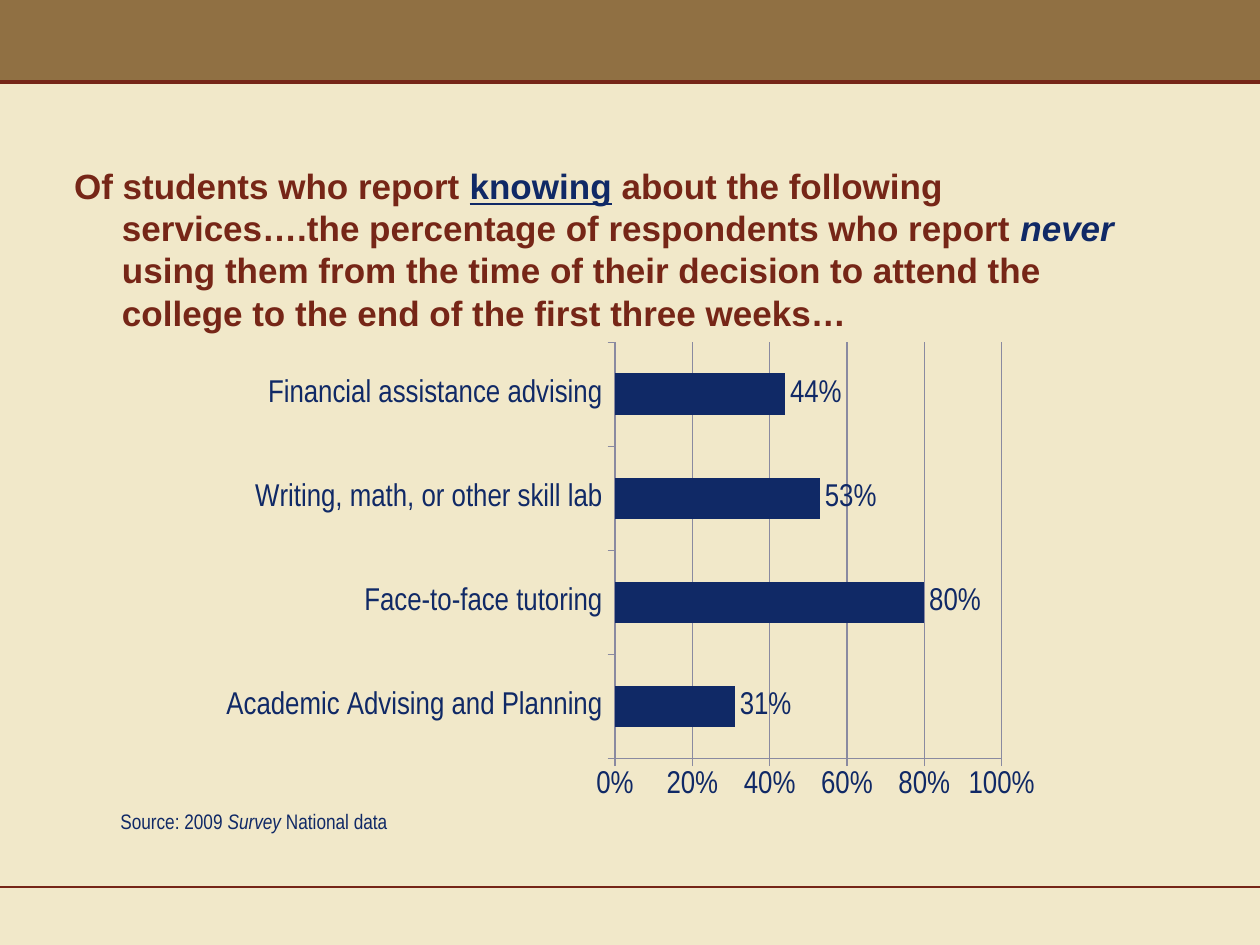
"""Build a slide with a bar chart of services that students know but never use."""
from lxml import etree
from pptx import Presentation
from pptx.chart.data import CategoryChartData as ChartData
from pptx.dml.color import RGBColor
from pptx.enum.chart import XL_CHART_TYPE as ChartType, XL_LABEL_POSITION as LabelPosition
from pptx.enum.chart import XL_TICK_MARK as TickMark
from pptx.enum.shapes import MSO_CONNECTOR as Connector, MSO_SHAPE as Shape
from pptx.enum.text import PP_ALIGN as Align
from pptx.oxml.ns import qn
from pptx.util import Inches, Pt

COLORS = {name: RGBColor.from_string(value) for name, value in {
    "cream": "F1E8C9", "brown": "866435", "maroon": "762617",
    "navy": "102966", "grid": "8A8AA0"}.items()}


def add_span(para, text, font, size, color, bold=False, italic=False, underline=False):
    """Append one formatted run to a paragraph."""
    span = para.add_run()
    span.text = text
    span.font.name = font
    span.font.size = Pt(size)
    span.font.color.rgb = COLORS[color]
    span.font.bold, span.font.italic, span.font.underline = bold, italic, underline


def add_text(left, top, width, height):
    """Add a wrapping text box and return its first paragraph."""
    box = page.shapes.add_textbox(Inches(left), Inches(top), Inches(width), Inches(height))
    box.text_frame.word_wrap = True
    return box.text_frame.paragraphs[0]


deck = Presentation()
deck.slide_width, deck.slide_height = Inches(10), Inches(7.5)
page = deck.slides.add_slide(deck.slide_layouts[6])

for height, color, opacity in [(7.5, "cream", 100), (0.64, "brown", 90)]:
    panel = page.shapes.add_shape(Shape.RECTANGLE, 0, 0, Inches(10), Inches(height))
    panel.shadow.inherit = False
    panel.fill.solid()
    panel.fill.fore_color.rgb = COLORS[color]
    panel.line.fill.background()
    if opacity < 100:
        tint = panel.fill._xPr.find(".//" + qn("a:srgbClr"))
        etree.SubElement(tint, qn("a:alpha"), val=str(opacity * 1000))

for top, weight in [(0.65, 2.25), (7.04, 1.5)]:
    rule = page.shapes.add_connector(Connector.STRAIGHT, 0, Inches(top), Inches(10), Inches(top))
    rule.line.color.rgb = COLORS["maroon"]
    rule.line.width = Pt(weight)
    etree.SubElement(rule._element.spPr, qn("a:effectLst"))

question = add_text(0.49, 1.26, 8.83, 1.45)
indent = Inches(0.38)
properties = question._p.get_or_add_pPr()
properties.set("marL", str(indent))
properties.set("indent", str(-indent))
for text, color, style in [
    ("Of students who report ", "maroon", {}),
    ("knowing", "navy", {"underline": True}),
    (" about the following services….the percentage of respondents who report ", "maroon", {}),
    ("never", "navy", {"italic": True}),
    (" using them from the time of their decision to attend the college"
     " to the end of the first three weeks…", "maroon", {}),
]:
    add_span(question, text, "Arial", 20, color, bold=True, **style)

services = {
    "Academic Advising and Planning": 0.31,
    "Face-to-face tutoring": 0.8,
    "Writing, math, or other skill lab": 0.53,
    "Financial assistance advising": 0.44,
}
data = ChartData(number_format="0%")
data.categories = list(services)
data.add_series("Series 1", list(services.values()))
chart = page.shapes.add_chart(ChartType.BAR_CLUSTERED, Inches(1.68), Inches(2.64),
                              Inches(6.67), Inches(3.8), data).chart
chart.has_legend = False
chart.has_title = False
chart.font.name = "Arial Narrow"
chart.font.size = Pt(18)
chart.font.color.rgb = COLORS["navy"]

plot = chart.plots[0]
plot.gap_width = 150
plot.vary_by_categories = False
bars = plot.series[0].format.fill
bars.solid()
bars.fore_color.rgb = COLORS["navy"]
plot.has_data_labels = True
labels = plot.data_labels
labels.show_value = True
labels.number_format = "0%"
labels.number_format_is_linked = False
labels.position = LabelPosition.OUTSIDE_END

scale = chart.value_axis
scale.minimum_scale, scale.maximum_scale, scale.major_unit = 0, 1, 0.2
scale.has_major_gridlines = True
scale.tick_labels.number_format = "0%"
scale.tick_labels.number_format_is_linked = False
for axis in (chart.category_axis, scale):
    axis.major_tick_mark = TickMark.OUTSIDE
for part in (chart.category_axis, scale, scale.major_gridlines):
    part.format.line.color.rgb = COLORS["grid"]
    part.format.line.width = Pt(0.75)

area = chart._chartSpace.chart.plotArea
for old in area.findall(qn("c:layout")):
    area.remove(old)
layout = etree.Element(qn("c:layout"))
area.insert(0, layout)
manual = etree.SubElement(layout, qn("c:manualLayout"))
for tag, value in [("layoutTarget", "inner"), ("xMode", "edge"), ("yMode", "edge"),
                   ("x", "0.48"), ("y", "0.02"), ("w", "0.46"), ("h", "0.87")]:
    etree.SubElement(manual, qn("c:" + tag), val=value)

source = add_text(0.7, 6.37, 2.63, 0.3)
source.alignment = Align.CENTER
for text, italic in [("Source: 2009 ", False), ("Survey ", True), ("National data", False)]:
    add_span(source, text, "Arial Narrow", 12, "navy", italic=italic)

deck.save("out.pptx")
